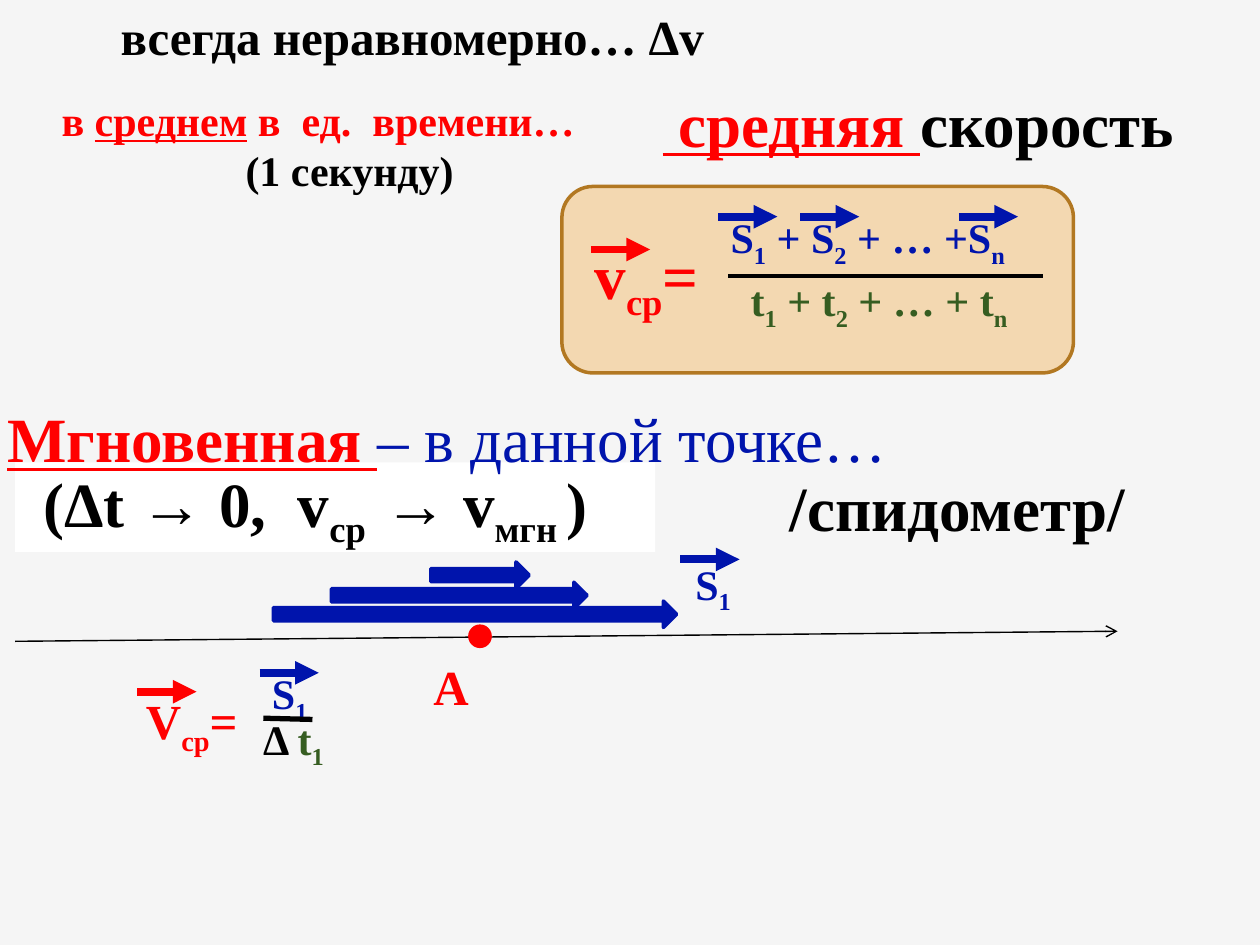
from dataclasses import dataclass

import pptx
import pptx.dml.color
import pptx.enum.shapes
import pptx.enum.text
import pptx.oxml
import pptx.oxml.ns
import pptx.util
from lxml import etree

Inches = pptx.util.Inches
Pt = pptx.util.Pt
Kind = pptx.enum.shapes.MSO_SHAPE
Align = pptx.enum.text.PP_ALIGN
qn = pptx.oxml.ns.qn

RED, BLUE, GREEN, BLACK = "FF0000", "0014AC", "365D21", "000000"


@dataclass
class Run:
    text: str
    hue: str
    bold: bool = True
    under: bool = False


@dataclass
class Note:
    left: float
    top: float
    width: float
    height: float
    size: int
    rows: list[list[Run]]


@dataclass
class Form:
    kind: int
    left: float
    top: float
    width: float
    height: float
    fill: str
    edge: str


@dataclass
class Line:
    start: tuple[float, float]
    end: tuple[float, float]
    hue: str
    weight: float
    head: str = ""


def color(code: str) -> pptx.dml.color.RGBColor:
    return pptx.dml.color.RGBColor.from_string(code)


def write(frame, size: int, rows: list[list[Run]]) -> None:
    frame.word_wrap = True
    for index, row in enumerate(rows):
        para = frame.paragraphs[0] if index == 0 else frame.add_paragraph()
        para.alignment = Align.CENTER if index else Align.LEFT
        for item in row:
            style = {"name": "Times New Roman", "size": Pt(size),
                     "bold": item.bold, "underline": item.under}
            for order, part in enumerate(item.text.split("|")):
                if not part:
                    continue
                run = para.add_run()
                run.text = part
                for key, value in style.items():
                    setattr(run.font, key, value)
                run.font.color.rgb = color(item.hue)
                if order % 2:
                    run._r.get_or_add_rPr().set("baseline", "-25000")


def draw_note(slide, note: Note) -> None:
    box = slide.shapes.add_textbox(Inches(note.left), Inches(note.top),
                                   Inches(note.width), Inches(note.height))
    write(box.text_frame, note.size, note.rows)


def draw_form(slide, form: Form):
    shape = slide.shapes.add_shape(form.kind, Inches(form.left), Inches(form.top),
                                   Inches(form.width), Inches(form.height))
    shape.shadow.inherit = False
    shape.fill.solid()
    shape.fill.fore_color.rgb = color(form.fill)
    if form.edge:
        shape.line.color.rgb = color(form.edge)
        shape.line.width = Pt(2)
    else:
        shape.line.fill.background()
    return shape


def draw_line(slide, line: Line) -> None:
    ends = [Inches(value) for value in line.start + line.end]
    link = slide.shapes.add_connector(pptx.enum.shapes.MSO_CONNECTOR.STRAIGHT, *ends)
    link.line.color.rgb = color(line.hue)
    link.line.width = Pt(line.weight)
    props = link._element.spPr
    if line.head:
        etree.SubElement(props.find(qn("a:ln")), qn("a:tailEnd")).set("type", line.head)
    etree.SubElement(props, qn("a:effectLst"))


def vector(left: float, top: float, hue: str) -> Line:
    return Line((left, top), (left + 0.47, top), hue, 4.5, "triangle")


PANEL = Form(Kind.ROUNDED_RECTANGLE, 4.46, 1.48, 4.06, 1.48, "F0A22E", "B27822")
LIMIT = Form(Kind.RECTANGLE, 0.12, 3.67, 5.08, 0.71, "FFFFFF", "")
AXIS = Line((0.12, 5.09), (8.87, 5.01), BLACK, 0.79, "arrow")
PATHS = [(2.17, 4.77, 3.2), (2.63, 4.62, 2.03), (3.42, 4.46, 0.78)]
POINT = Form(Kind.FLOWCHART_CONNECTOR, 3.73, 4.97, 0.16, 0.16, RED, RED)

NOTES = [
    Note(0.86, 0, 5, 0.57, 28, [[Run("всегда неравномерно… Δv", BLACK)]]),
    Note(0.39, 0.7, 4.77, 0.91, 24, [
        [Run("в ", RED), Run("среднем", RED, under=True),
         Run(" в  ед.  времени…", RED)],
        [Run("(1 секунду)", BLACK)]]),
    Note(4.62, 1.83, 1.25, 0.71, 36, [[Run("v|ср|=", RED)]]),
    Note(5.7, 1.63, 2.58, 0.5, 24, [[Run("S|1| + S|2| + … +S|n", BLUE)]]),
    Note(5.86, 2.13, 2.34, 0.5, 24, [[Run("t|1| + t|2| + … + t|n", GREEN)]]),
    Note(5.42, 4.38, 0.55, 0.5, 24, [[Run("S|1", BLUE)]]),
    Note(3.34, 5.16, 0.55, 0.57, 28, [[Run("А", RED)]]),
    Note(5.16, 0.62, 4.61, 0.71, 36, [
        [Run(" средняя ", RED, under=True), Run("скорость", BLACK)]]),
    Note(-0.04, 3.12, 7.19, 0.71, 36, [
        [Run("Мгновенная ", RED, under=True),
         Run("– в данной точке…", BLUE, bold=False)]]),
    Note(6.17, 3.67, 3.13, 0.71, 36, [[Run("/спидометр/", BLACK)]]),
    Note(2.06, 5.25, 0.63, 0.5, 24, [[Run("S|1", BLUE)]]),
    Note(1.06, 5.43, 1.25, 0.57, 28, [[Run("V|ср|=", RED)]]),
    Note(1.99, 5.61, 0.86, 0.5, 24, [[Run("Δ ", BLACK), Run("t|1", GREEN)]]),
]

BARS = [
    Line((5.78, 2.19), (8.28, 2.19), BLACK, 2.25),
    Line((2.09, 5.7), (2.48, 5.71), BLACK, 3),
]
MARKS = [
    (4.69, 1.98, RED), (1.09, 5.49, RED),
    (5.7, 1.72, BLUE), (6.35, 1.72, BLUE), (7.61, 1.72, BLUE),
    (5.4, 4.44, BLUE), (2.06, 5.34, BLUE),
]


def main() -> None:
    deck = pptx.Presentation()
    deck.slide_width, deck.slide_height = Inches(10), Inches(7.5)
    slide = deck.slides.add_slide(deck.slide_layouts[6])
    slide.background.fill.solid()
    slide.background.fill.fore_color.rgb = color("F5F5F5")

    panel = draw_form(slide, PANEL)
    tint = panel._element.spPr.find(qn("a:solidFill"))[0]
    etree.SubElement(tint, qn("a:alpha")).set("val", "34000")
    limit = draw_form(slide, LIMIT)
    write(limit.text_frame, 36, [[Run(" (Δt → 0,  v|ср  |→ v|мгн |)", BLACK)]])
    draw_line(slide, AXIS)
    for left, top, width in PATHS:
        draw_form(slide, Form(Kind.RIGHT_ARROW, left, top, width, 0.21, BLUE, BLUE))
    draw_form(slide, POINT)
    for note in NOTES:
        draw_note(slide, note)
    for line in BARS + [vector(*mark) for mark in MARKS]:
        draw_line(slide, line)
    deck.save("out.pptx")


if __name__ == "__main__":
    main()
